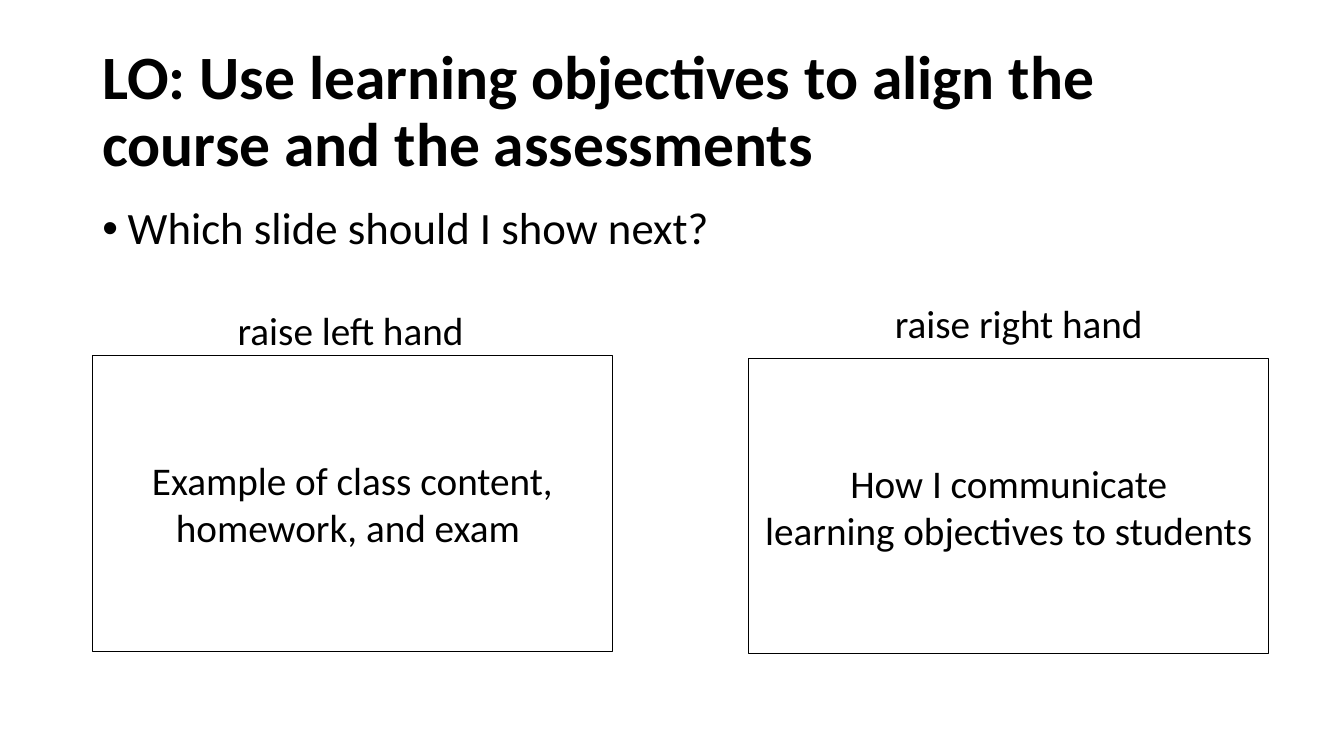
from lxml import etree
from pptx import Presentation
from pptx import util as u
from pptx.dml.color import RGBColor
from pptx.enum import shapes, text
from pptx.oxml.ns import qn

COLOURS = {"ink": "000000"}
FONT = "Calibri"
MARGIN, CONTENT_WIDTH = 2.33, 29.21
CHOICE_WIDTH, CHOICE_HEIGHT = 13.1, 7.44
LABEL_HEIGHT = 1.45

# label, (label left, top, width), (box left, top), paragraphs as lists of lines
CHOICES = [
    ("raise left hand", (5.74, 7.59, 6.27), (MARGIN, 8.97),
     [["Example of class content,"], ["homework, and exam "]]),
    ("raise right hand", (22.3, 7.42, 6.83), (18.87, 9.04),
     [["How I communicate", "learning objectives to students"]]),
]


class SlideBuilder:
    """Holds the text style and the page being filled."""

    def __init__(self, page):
        self.page = page
        self.ink = RGBColor.from_string(COLOURS["ink"])

    def add_lines(self, para, lines, size, bold=False):
        """Add each line as a run, with line breaks between them."""
        for number, line in enumerate(lines):
            if number:
                para.add_line_break()
            span = para.add_run()
            span.text = line
            span.font.name = FONT
            span.font.size = u.Pt(size)
            span.font.bold = bold
            span.font.color.rgb = self.ink

    def text_box(self, words, place, size, bold=False, wrap=True):
        box = self.page.shapes.add_textbox(*map(u.Cm, place))
        box.text_frame.word_wrap = wrap
        self.add_lines(box.text_frame.paragraphs[0], [words], size, bold)
        return box.text_frame

    def title(self, words, place):
        frame = self.text_box(words, place, 44, bold=True)
        frame.vertical_anchor = text.MSO_ANCHOR.MIDDLE
        frame.paragraphs[0].line_spacing = 0.9

    def bullet(self, words, place):
        para = self.text_box(words, place, 32).paragraphs[0]
        para.line_spacing = 0.9
        para.space_before = u.Pt(10)
        properties = para._p.get_or_add_pPr()
        indent = u.Cm(0.64)
        properties.set("marL", str(indent))
        properties.set("indent", str(-indent))
        etree.SubElement(properties, qn("a:buFont"), typeface="Arial")
        etree.SubElement(properties, qn("a:buChar"), char="•")

    def choice_box(self, paragraphs, place):
        box = self.page.shapes.add_shape(
            shapes.MSO_SHAPE.RECTANGLE, *map(u.Cm, place))
        box.shadow.inherit = False
        box.fill.background()
        box.line.color.rgb = self.ink
        box.line.width = u.Pt(0.75)
        frame = box.text_frame
        frame.word_wrap = True
        frame.vertical_anchor = text.MSO_ANCHOR.MIDDLE
        for number, lines in enumerate(paragraphs):
            para = frame.add_paragraph() if number else frame.paragraphs[0]
            para.alignment = text.PP_ALIGN.CENTER
            self.add_lines(para, lines, 28)


def main():
    deck = Presentation()
    deck.slide_width, deck.slide_height = u.Cm(33.87), u.Cm(19.05)
    builder = SlideBuilder(deck.slides.add_slide(deck.slide_layouts[6]))

    builder.title("LO: Use learning objectives to align the course and the assessments",
                  (MARGIN, 1.01, CONTENT_WIDTH, 3.68))
    builder.bullet("Which slide should I show next?",
                   (MARGIN, 5.07, CONTENT_WIDTH, 12.09))
    for label, label_place, corner, paragraphs in CHOICES:
        builder.choice_box(paragraphs, (*corner, CHOICE_WIDTH, CHOICE_HEIGHT))
        builder.text_box(label, (*label_place, LABEL_HEIGHT), 28, wrap=False)
    deck.save("out.pptx")


if __name__ == "__main__":
    main()
